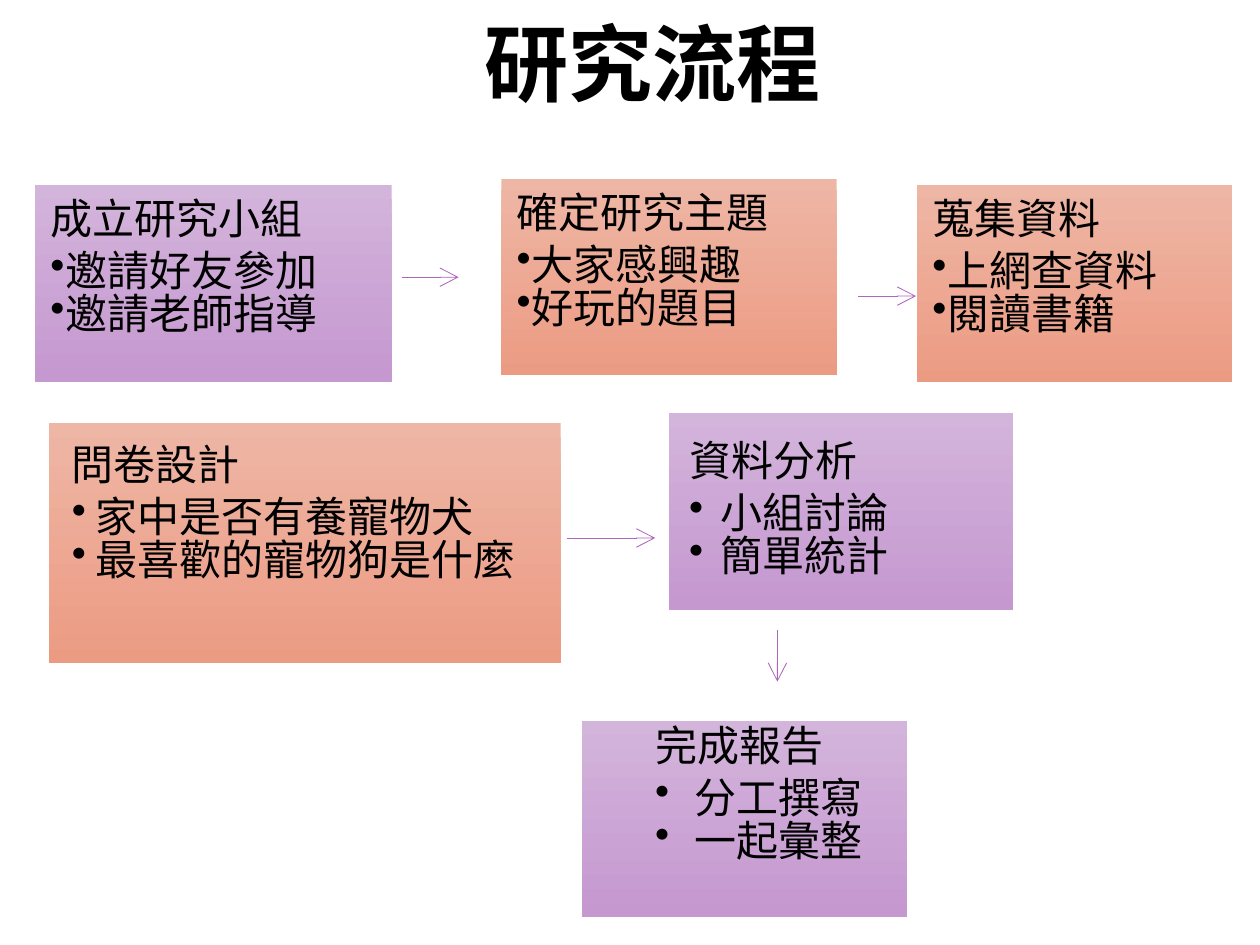
from lxml.etree import SubElement
from pptx import Presentation
from pptx.dml.color import RGBColor
from pptx.enum.shapes import MSO_CONNECTOR as Connector, MSO_SHAPE as Shape
from pptx.enum.text import MSO_ANCHOR as Anchor, PP_ALIGN as Align
from pptx.oxml.ns import qn
from pptx.util import Inches, Pt

FONT = "Noto Sans CJK SC"
COLORS = {
    "text": "000000",
    "arrow": "AC66BB",
    "purple": ("D3B4DB", "C598D0"),
    "orange": ("EEB6A5", "EC9B83"),
}
# Each step: place, colour, insets (left, top), bullet indent, heading, tasks
STEPS = [
    ((0.28, 1.47, 2.83, 1.56), "purple", (0.12, 0.12), 0.12,
     "成立研究小組", ["邀請好友參加", "邀請老師指導"]),
    ((3.98, 1.42, 2.66, 1.56), "orange", (0.12, 0.12), 0.12,
     "確定研究主題", ["大家感興趣", "好玩的題目"]),
    ((7.28, 1.47, 2.5, 1.56), "orange", (0.12, 0.12), 0.12,
     "蒐集資料", ["上網查資料", "閱讀書籍"]),
    ((0.39, 3.36, 4.06, 1.9), "orange", (0.18, 0.18), 0.19,
     "問卷設計", ["家中是否有養寵物犬", "最喜歡的寵物狗是什麼"]),
    ((5.31, 3.28, 2.73, 1.56), "purple", (0.16, 0.23), 0.25,
     "資料分析", ["小組討論", "簡單統計"]),
    ((4.62, 5.72, 2.58, 1.56), "purple", (0.58, 0.05), 0.31,
     "完成報告", ["分工撰寫", "一起彙整"]),
]
ARROWS = [
    (3.19, 2.2, 3.64, 2.2),
    (6.81, 2.35, 7.27, 2.35),
    (4.5, 4.27, 5.2, 4.27),
    (6.17, 5.0, 6.17, 5.41),
]


def add_run(paragraph, text, size, bold=False):
    """Add one run in the slide's font."""
    run = paragraph.add_run()
    run.text = text
    run.font.size = Pt(size)
    run.font.bold = bold
    run.font.color.rgb = RGBColor.from_string(COLORS["text"])
    run.font.name = FONT
    SubElement(run.font._element, qn("a:ea"), typeface=FONT)


def add_bullet(paragraph, indent):
    """Give a paragraph a round bullet with a hanging indent."""
    properties = paragraph._p.get_or_add_pPr()
    properties.set("marL", str(Inches(indent)))
    properties.set("indent", str(-Inches(indent)))
    SubElement(properties, qn("a:buChar"), char="•")


def add_title(slide, text):
    """Place and fill the title placeholder."""
    title = slide.shapes.title
    title.left, title.top = Inches(1.33), Inches(0)
    title.width, title.height = Inches(7.69), Inches(0.92)
    frame = title.text_frame
    frame.vertical_anchor = Anchor.BOTTOM
    frame.margin_bottom = Inches(0.02)
    heading = frame.paragraphs[0]
    heading.alignment = Align.CENTER
    heading.line_spacing = 0.9
    add_run(heading, text, 48, bold=True)


def add_step(slide, place, color, insets, indent, heading, tasks):
    """Draw one step box with its heading and bulleted tasks."""
    step = slide.shapes.add_shape(Shape.RECTANGLE, *map(Inches, place))
    step.shadow.inherit = False
    step.line.fill.background()
    step.fill.gradient()
    step.fill.gradient_angle = 270
    for stop, shade in zip(step.fill.gradient_stops, COLORS[color]):
        stop.color.rgb = RGBColor.from_string(shade)

    frame = step.text_frame
    frame.word_wrap = True
    frame.vertical_anchor = Anchor.TOP
    frame.margin_left, frame.margin_top = map(Inches, insets)
    frame.margin_right = frame.margin_bottom = Inches(0.05)
    for index, text in enumerate([heading, *tasks]):
        line = frame.add_paragraph() if index else frame.paragraphs[0]
        line.alignment = Align.LEFT
        line.line_spacing = 0.85
        line.space_after = Pt(0 if index else 5.4)
        if index:
            add_bullet(line, indent)
        add_run(line, text, 24)


def add_arrow(slide, ends):
    """Draw a thin arrow leading to the next step."""
    arrow = slide.shapes.add_connector(Connector.STRAIGHT, *map(Inches, ends))
    arrow.line.color.rgb = RGBColor.from_string(COLORS["arrow"])
    arrow.line.width = Pt(0.5)
    SubElement(arrow.line._get_or_add_ln(), qn("a:tailEnd"), type="arrow", w="lg", len="lg")
    SubElement(arrow._element.spPr, qn("a:effectLst"))


def main():
    """Build the research process slide."""
    deck = Presentation()
    deck.slide_width, deck.slide_height = Inches(10), Inches(7.5)
    slide = deck.slides.add_slide(deck.slide_layouts.get_by_name("Title Only"))
    add_title(slide, "研究流程")
    for step in STEPS:
        add_step(slide, *step)
    for ends in ARROWS:
        add_arrow(slide, ends)
    deck.save("out.pptx")


if __name__ == "__main__":
    main()
